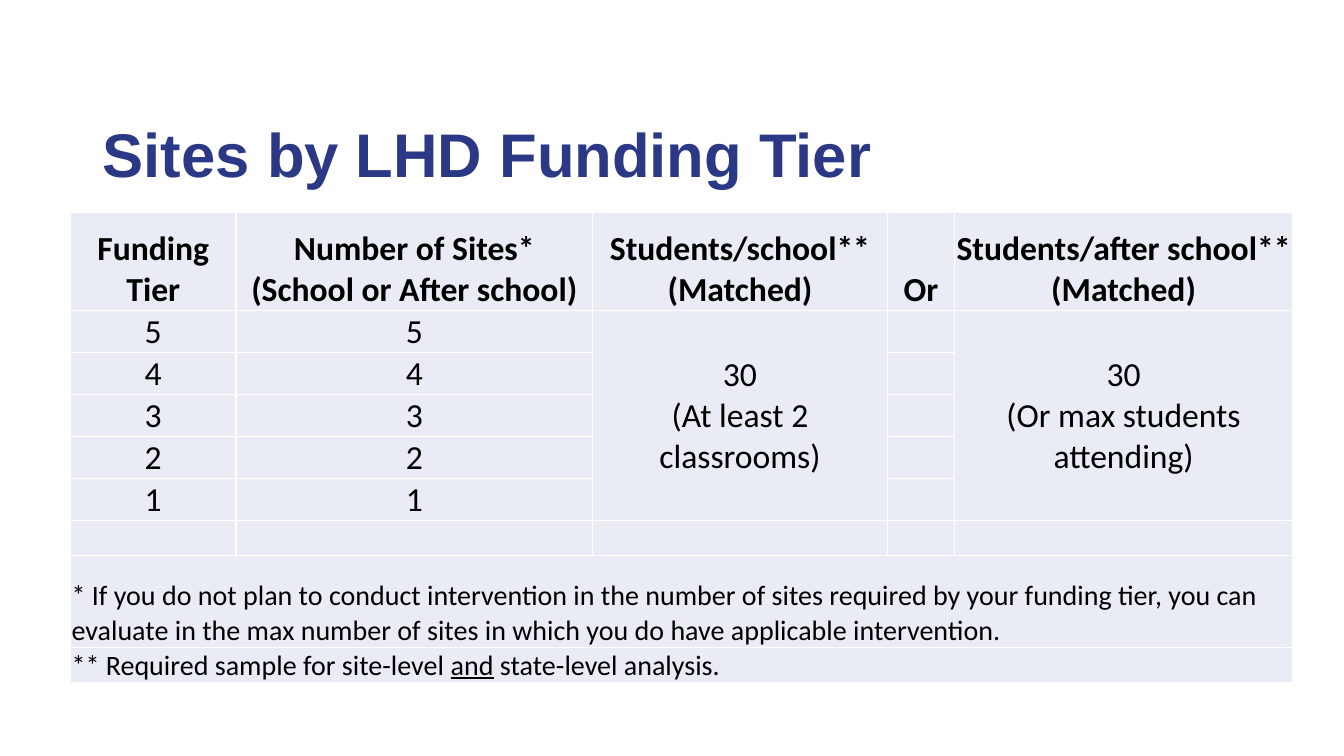
"""Build the slide that lists evaluation sites by LHD funding tier."""
from dataclasses import dataclass

from lxml.etree import SubElement
from pptx import Presentation
from pptx.dml.color import RGBColor
from pptx.enum.text import MSO_ANCHOR, PP_ALIGN
from pptx.oxml.ns import qn
from pptx.slide import Slide
from pptx.table import Table, _Cell
from pptx.util import Emu, Pt

EMU_PER_PX = 9144
WHITE, BLACK, NAVY, PALE_BLUE = "FFFFFF", "000000", "2B3885", "E9EBF5"
COLUMN_WIDTHS = [164, 354, 292, 67, 335]
ROW_HEIGHTS = [97, 32, 32, 32, 32, 33, 14, 91, 32]
TIERS = [5, 4, 3, 2, 1]
FOOTNOTE_ROW = len(TIERS) + 2
CELL_MARGINS = {"margin_left": 1, "margin_right": 1, "margin_top": 1, "margin_bottom": 0}


@dataclass(frozen=True)
class Entry:
    """Text of one table cell, with its place, span and format."""
    row: int
    column: int
    text: str
    size: int = 24
    bold: bool = False
    underlined: str = ""
    row_span: int = 1
    column_span: int = 1
    align: PP_ALIGN = PP_ALIGN.CENTER
    anchor: MSO_ANCHOR = MSO_ANCHOR.BOTTOM


HEADINGS = [
    "Funding Tier",
    "Number of Sites*\v(School or After school)",
    "Students/school**\n(Matched)",
    "Or",
    "Students/after school** (Matched)",
]
SAMPLES = {2: "30\v(At least 2 classrooms)", 4: "30\v(Or max students attending)"}
FOOTNOTES = [
    ("* If you do not plan to conduct intervention in the number of sites required by your "
     "funding tier, you can evaluate in the max number of sites in which you do have "
     "applicable intervention.", ""),
    ("** Required sample for site-level and state-level analysis.", "and"),
]
ENTRIES = [
    *(Entry(0, column, text, bold=True) for column, text in enumerate(HEADINGS)),
    *(Entry(row, column, str(tier)) for row, tier in enumerate(TIERS, 1) for column in (0, 1)),
    *(Entry(1, column, text, row_span=len(TIERS), anchor=MSO_ANCHOR.MIDDLE)
      for column, text in SAMPLES.items()),
    *(Entry(row, 0, text, size=20, underlined=word, column_span=len(COLUMN_WIDTHS),
            align=PP_ALIGN.LEFT)
      for row, (text, word) in enumerate(FOOTNOTES, FOOTNOTE_ROW)),
]


def px(length: int) -> Emu:
    """Turn px into EMU."""
    return Emu(length * EMU_PER_PX)


def color(value: str) -> RGBColor:
    """Turn a hex string into a colour."""
    return RGBColor.from_string(value)


def set_attributes(target: object, values: dict) -> None:
    """Set each named attribute of the target."""
    for name, value in values.items():
        setattr(target, name, value)


def add_title(slide: Slide, text: str) -> None:
    """Place and format the title placeholder."""
    title = slide.shapes.title
    set_attributes(title, {"left": px(92), "top": px(84), "width": px(1150), "height": px(145)})
    title.text_frame.text = text
    title.text_frame.vertical_anchor = MSO_ANCHOR.MIDDLE
    paragraph = title.text_frame.paragraphs[0]
    set_attributes(paragraph, {"alignment": PP_ALIGN.LEFT, "line_spacing": 0.9})
    font = paragraph.runs[0].font
    set_attributes(font, {"name": "Arial", "size": Pt(44), "bold": True})
    font.color.rgb = color(NAVY)


def style_cell(cell: _Cell) -> None:
    """Give a cell its margins, white borders, fill and empty-line size."""
    set_attributes(cell, {name: px(margin) for name, margin in CELL_MARGINS.items()})
    properties = cell._tc.get_or_add_tcPr()
    for side in ("lnL", "lnR", "lnT", "lnB"):
        line = SubElement(properties, qn(f"a:{side}"), w=str(Pt(1)))
        SubElement(SubElement(line, qn("a:solidFill")), qn("a:srgbClr"), val=WHITE)
    cell.fill.solid()
    cell.fill.fore_color.rgb = color(PALE_BLUE)
    SubElement(cell.text_frame.paragraphs[0]._p, qn("a:endParaRPr"), sz="2000")


def fill_entry(table: Table, entry: Entry) -> None:
    """Write an entry into its cell, merging the cells that it spans."""
    cell = table.cell(entry.row, entry.column)
    if entry.row_span > 1 or entry.column_span > 1:
        cell.merge(table.cell(entry.row + entry.row_span - 1,
                              entry.column + entry.column_span - 1))
    cell.vertical_anchor = entry.anchor
    cell.text_frame.text = entry.text
    if entry.underlined:
        paragraph = cell.text_frame.paragraphs[0]
        paragraph.clear()
        for part in entry.text.partition(entry.underlined):
            run = paragraph.add_run()
            run.text = part
            run.font.underline = part == entry.underlined
    for paragraph in cell.text_frame.paragraphs:
        paragraph.alignment = entry.align
        for run in paragraph.runs:
            set_attributes(run.font, {"name": "Calibri", "size": Pt(entry.size),
                                      "bold": entry.bold})
            run.font.color.rgb = color(BLACK)


def add_tier_table(slide: Slide) -> None:
    """Add the funding tier table."""
    frame = slide.shapes.add_table(len(ROW_HEIGHTS), len(COLUMN_WIDTHS),
                                   px(70), px(211), px(1211), px(460))
    table = frame.table
    set_attributes(table, {"first_row": False, "horz_banding": False})
    for column, width in zip(table.columns, COLUMN_WIDTHS):
        column.width = px(width)
    for row, height in zip(table.rows, ROW_HEIGHTS):
        row.height = px(height)
    for cell in table.iter_cells():
        style_cell(cell)
    for entry in ENTRIES:
        fill_entry(table, entry)
    frame.height = px(460)


def main() -> None:
    """Build and save the presentation."""
    presentation = Presentation()
    set_attributes(presentation, {"slide_width": px(1333), "slide_height": px(750)})
    slide = presentation.slides.add_slide(presentation.slide_layouts.get_by_name("Title Only"))
    add_title(slide, "Sites by LHD Funding Tier")
    add_tier_table(slide)
    presentation.save("out.pptx")


if __name__ == "__main__":
    main()
